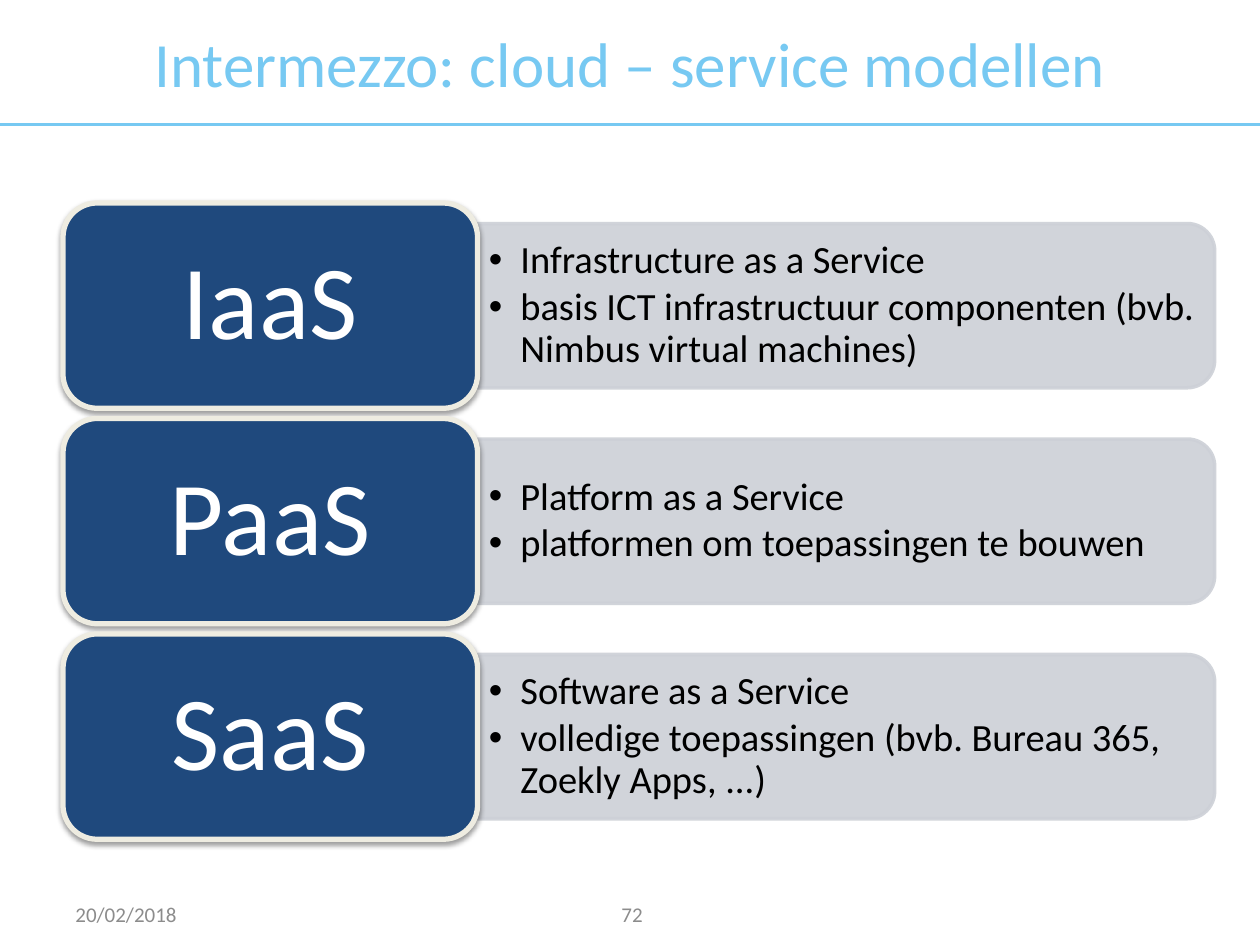
from lxml.etree import SubElement
from pptx import Presentation
from pptx.dml.color import RGBColor
from pptx.enum.shapes import MSO_CONNECTOR, MSO_SHAPE
from pptx.enum.text import MSO_ANCHOR, PP_ALIGN
from pptx.oxml.ns import qn
from pptx.util import Pt

COLORS = {
    "sky": "77C9F2",
    "footer": "8C8C8C",
    "panel": "CDD0D7",
    "card": "1F497D",
    "border": "EEECE1",
    "white": "FFFFFF",
    "black": "000000",
}
FONT = "Calibri"
MODELS = [
    ("IaaS", ["Infrastructure as a Service",
              "basis ICT infrastructuur componenten (bvb. Nimbus virtual machines)"]),
    ("PaaS", ["Platform as a Service",
              "platformen om toepassingen te bouwen"]),
    ("SaaS", ["Software as a Service",
              "volledige toepassingen (bvb. Bureau 365, Zoekly Apps, ...)"]),
]


def color(name):
    return RGBColor.from_string(COLORS[name])


def write_text(shape, lines, size, color_name, align=PP_ALIGN.LEFT, spacing=None):
    frame = shape.text_frame
    frame.word_wrap = True
    frame.vertical_anchor = MSO_ANCHOR.MIDDLE
    frame.text = "\n".join(lines)
    for paragraph in frame.paragraphs:
        paragraph.alignment = align
        paragraph.line_spacing = spacing
        for run in paragraph.runs:
            run.font.name = FONT
            run.font.size = Pt(size)
            run.font.color.rgb = color(color_name)
    return frame


def add_text(slide, box, *text):
    left, top, width, height = map(Pt, box)
    return write_text(slide.shapes.add_textbox(left, top, width, height), *text)


def add_box(slide, preset, box, fill, line, line_width):
    shape = slide.shapes.add_shape(preset, *map(Pt, box))
    shape.shadow.inherit = False
    shape.fill.solid()
    shape.fill.fore_color.rgb = color(fill)
    shape.line.color.rgb = color(line)
    shape.line.width = Pt(line_width)
    return shape


def add_bullet(paragraph):
    properties = paragraph._p.get_or_add_pPr()
    properties.set("marL", str(Pt(18)))
    properties.set("indent", str(Pt(-18)))
    SubElement(properties, qn("a:buFont"), typeface="Arial")
    SubElement(properties, qn("a:buChar"), char="•")


def add_soft_shadow(shape):
    effects = shape._element.spPr.find(qn("a:effectLst"))
    shadow = SubElement(effects, qn("a:outerShdw"), blurRad=str(Pt(3.1)),
                        dist=str(Pt(1.6)), dir="5400000", rotWithShape="0")
    shade = SubElement(shadow, qn("a:srgbClr"), val=COLORS["black"])
    SubElement(shade, qn("a:alpha"), val="38000")


def add_header(slide, left, top, width, height):
    add_text(slide, (left, top, width, height),
             ["Intermezzo: cloud – service modellen"], 36, "sky", PP_ALIGN.CENTER)
    bottom = Pt(top + height)
    rule = slide.shapes.add_connector(MSO_CONNECTOR.STRAIGHT, Pt(left), bottom,
                                      Pt(left + width), bottom)
    rule.line.color.rgb = color("sky")
    rule.line.width = Pt(1.5)
    SubElement(rule._element.spPr, qn("a:effectLst"))


def add_panel(slide, left, top, width, height, lines):
    offset = (width - height) / 2
    panel = add_box(slide, MSO_SHAPE.ROUND_2_SAME_RECTANGLE,
                    (left + offset, top - offset, height, width), "panel", "panel", 2)
    panel.rotation = 90
    for tint in panel._element.spPr.iter(qn("a:srgbClr")):
        SubElement(tint, qn("a:alpha"), val="90000")
    frame = add_text(slide, (left, top + 4.5, width - 5, height - 9),
                     lines, 22, "black", PP_ALIGN.LEFT, 0.9)
    frame.margin_left = frame.margin_right = Pt(6.5)
    for paragraph in frame.paragraphs:
        paragraph.space_after = Pt(3)
        add_bullet(paragraph)


def add_model(slide, left, top, width, height, name, lines):
    card_width = 236.9
    panel_height = height * 0.8
    add_panel(slide, left + card_width, top + (height - panel_height) / 2,
              width - card_width, panel_height, lines)
    card = add_box(slide, MSO_SHAPE.ROUNDED_RECTANGLE,
                   (left, top, card_width, height), "card", "border", 3)
    add_soft_shadow(card)
    write_text(card, [name], 60, "white", PP_ALIGN.CENTER, 0.9)


def add_models(slide, left, top, width, height):
    gap = 5.8
    row_height = (height - gap * (len(MODELS) - 1)) / len(MODELS)
    for index, (name, lines) in enumerate(MODELS):
        add_model(slide, left, top + index * (row_height + gap), width, row_height,
                  name, lines)


def add_footer(slide, left, top, width, height):
    add_text(slide, (left, top, width, height), ["20/02/2018"], 12, "footer")
    add_text(slide, (left + 241.2, top, width, height), ["72"], 12, "footer",
             PP_ALIGN.CENTER)


def main():
    presentation = Presentation()
    presentation.slide_width = Pt(720)
    presentation.slide_height = Pt(540)
    slide = presentation.slides.add_slide(presentation.slide_layouts[6])
    add_header(slide, 0, 0, 720, 71.3)
    add_footer(slide, 36, 508, 168, 28.8)
    add_models(slide, 36, 116, 658.1, 363.6)
    presentation.save("out.pptx")


if __name__ == "__main__":
    main()
